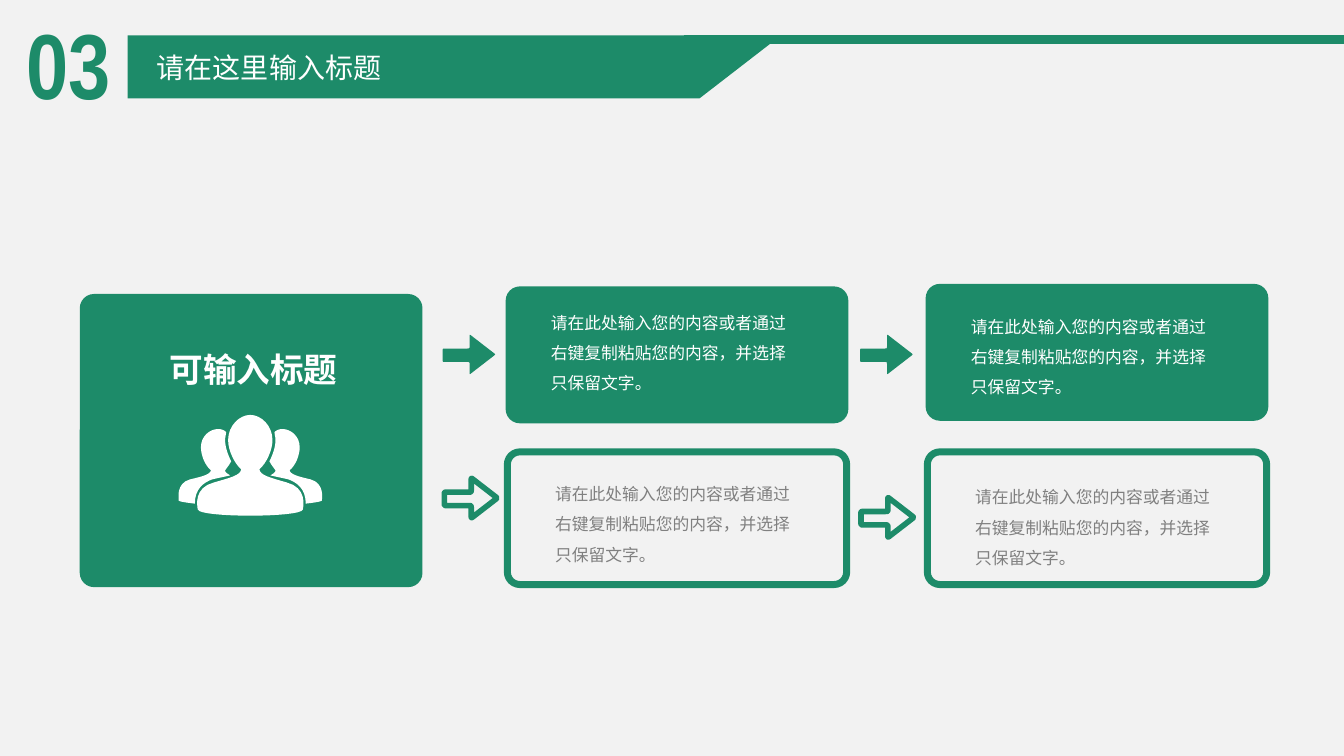
from dataclasses import dataclass

from lxml.etree import SubElement
from pptx import Presentation
from pptx.dml.color import RGBColor
from pptx.enum.shapes import MSO_CONNECTOR, MSO_SHAPE
from pptx.oxml.ns import qn
from pptx.util import Inches, Pt


@dataclass(frozen=True)
class Theme:
    """Colours, fonts and type sizes of the slide."""
    green: str = "1D8B69"
    white: str = "FFFFFF"
    grey: str = "808080"
    back: str = "F2F2F2"
    sans: str = "Noto Sans CJK SC"
    plain: str = "Arial"
    slim: str = "Arial Narrow"
    body: int = 12
    head: int = 20
    name: int = 24
    number: int = 66


THEME = Theme()
WIDE, HIGH = Inches(13.333), Inches(7.5)
COLS = 16
CELL = WIDE / COLS
NOTE = "请在此处输入您的内容或者通过右键复制粘贴您的内容，并选择只保留文字。"
ARROW = [(0, .14), (.32, .14), (.32, -.03), (.63, .21),
         (.32, .45), (.32, .3), (0, .3)]
FRONT = [((11, 0), (22, 11), (22, 25)), ((22, 35), (16, 48), (9, 54)),
         ((10, 60), (19, 62), (36, 67)), ((56, 72), (53, 90), (52, 94)),
         ((51, 98), (25, 100), (0, 100))]
SIDE = [((34, 63), (24, 61), (20, 60)), ((23, 58), (25, 57), (25, 55)),
        ((23, 52), (21, 50), (19, 46)), ((22, 40), (25, 32), (25, 25)),
        ((25, 22), (24, 19), (24, 17)), ((26, 15), (29, 14), (32, 14)),
        ((40, 14), (49, 21), (49, 32)), ((49, 40), (45, 50), (39, 55)),
        ((40, 59), (47, 61), (60, 64)), ((74, 68), (71, 83), (71, 85)),
        ((70, 86), (64, 87), (55, 88)), ((55, 73), (46, 67), (38, 64))]


def grid(*cells):
    """Turn grid cells into slide lengths."""
    return [round(cell * CELL) for cell in cells]


def tint(hue):
    """Give the colour for a hex string."""
    return RGBColor.from_string(hue)


def paint(shape, fill=None, line=0):
    """Fill a shape, or outline it in green when a line width is given."""
    shape.shadow.inherit = False
    if fill:
        shape.fill.solid()
        shape.fill.fore_color.rgb = tint(fill)
    else:
        shape.fill.background()
    if line:
        shape.line.color.rgb = tint(THEME.green)
        shape.line.width = Pt(line)
    else:
        shape.line.fill.background()


def outline(shapes, points, fill=None, line=0):
    """Draw a closed outline through grid points."""
    spots = [grid(*point) for point in points]
    pen = shapes.build_freeform(*spots[0])
    pen.add_line_segments(spots[1:], close=True)
    paint(pen.convert_to_shape(), fill, line)


def card(shapes, left, top, width, height, radius, fill=None, line=0):
    """Draw a card with round corners."""
    shape = shapes.add_shape(MSO_SHAPE.ROUNDED_RECTANGLE,
                             *grid(left, top, width, height))
    shape.adjustments[0] = radius / min(width, height)
    paint(shape, fill, line)


def label(shapes, area, text, size, hue, font, bold=False, space=None):
    """Add a wrapped text box with one run."""
    frame = shapes.add_textbox(*grid(*area)).text_frame
    frame.word_wrap = True
    para = frame.paragraphs[0]
    para.line_spacing = space
    run = para.add_run()
    run.text = text
    run.font.size = Pt(size)
    run.font.bold = bold
    run.font.color.rgb = tint(hue)
    run.font.name = font
    SubElement(run.font._element, qn("a:ea")).set("typeface", font)


def curve(start, parts, steps=8):
    """Sample points along a chain of cubic curves."""
    points = [start]
    for part in parts:
        knots = (points[-1], *part)
        for step in range(1, steps + 1):
            t = step / steps
            share = ((1 - t) ** 3, 3 * t * (1 - t) ** 2,
                     3 * t * t * (1 - t), t ** 3)
            points.append(tuple(sum(s * knot[axis] for s, knot in zip(share, knots))
                                for axis in (0, 1)))
    return points


def toward(here, there, reach):
    """Move a set length from one point to another."""
    gap = ((there[0] - here[0]) ** 2 + (there[1] - here[1]) ** 2) ** .5
    return tuple(a + (b - a) * reach / gap for a, b in zip(here, there))


def soften(points, reach=.03):
    """Round every corner of an outline."""
    soft = []
    for spot, here in enumerate(points):
        near = toward(here, points[spot - 1], reach)
        far = toward(here, points[(spot + 1) % len(points)], reach)
        soft += curve(near, [(here, here, far)], 4)
    return soft


def arrow(shapes, left, top, fill=None, line=0):
    """Draw a soft block arrow that points right."""
    points = [(left + x, top + y) for x, y in soften(ARROW)]
    outline(shapes, points, fill, line)


def people(shapes, mid, top, scale=.012):
    """Draw a group of three people around a middle line."""
    group = shapes.add_group_shape().shapes
    half = curve((0, 0), FRONT)
    side = curve((38, 64), SIDE)
    flip = [(-x, y) for x, y in side]
    front = half + [(-x, y) for x, y in half[-2:0:-1]]
    for form in (front, flip, side):
        outline(group, [(mid + x * scale, top + y * scale) for x, y in form],
                THEME.white)


def header(shapes):
    """Draw the title band with its number."""
    rule = shapes.add_connector(MSO_CONNECTOR.STRAIGHT, *grid(8.14, .47, COLS, .47))
    rule.line.color.rgb = tint(THEME.green)
    rule.line.width = Pt(6)
    SubElement(rule._element.spPr, qn("a:effectLst"))
    outline(shapes, [(1.52, .42), (9.3, .42), (8.33, 1.17), (1.52, 1.17)], THEME.green)
    label(shapes, (.2, .02, 1.91, 1.45), "03", THEME.number, THEME.green,
          THEME.slim, True)
    label(shapes, (1.75, .54, 4.01, .53), "请在这里输入标题", THEME.head,
          THEME.white, THEME.sans)


def step(shapes, col, top, low, tip, text):
    """Draw one column: a solid card above an open card, with arrows."""
    left = 6.02 + 5 * col
    card(shapes, left, top, 4.08, 1.63, .17, THEME.green)
    card(shapes, left + .02, 5.38, 4.04, 1.58, .15, line=5)
    arrow(shapes, 5.27 + 4.97 * col, 4.01, THEME.green)
    arrow(shapes, 5.29 + 4.96 * col, tip, line=4)
    for shift, row, hue in ((.42, text, THEME.white), (.47, low, THEME.grey)):
        label(shapes, (left + shift, row, 3.08, 1.21), NOTE, THEME.body, hue,
              THEME.plain, space=1.5)


def main():
    """Build and save the slide."""
    deck = Presentation()
    deck.slide_width, deck.slide_height = WIDE, HIGH
    slide = deck.slides.add_slide(deck.slide_layouts[6])
    slide.background.fill.solid()
    slide.background.fill.fore_color.rgb = tint(THEME.back)
    shapes = slide.shapes
    header(shapes)
    card(shapes, .95, 3.5, 4.08, 3.49, .17, THEME.green)
    label(shapes, (1.9, 4.1, 3.59, .6), "可输入标题", THEME.name, THEME.white,
          THEME.sans, True)
    people(shapes, 2.98, 4.94)
    step(shapes, 0, top=3.41, low=5.58, tip=5.72, text=3.54)
    step(shapes, 1, top=3.38, low=5.62, tip=5.95, text=3.59)
    deck.save("out.pptx")


if __name__ == "__main__":
    main()
